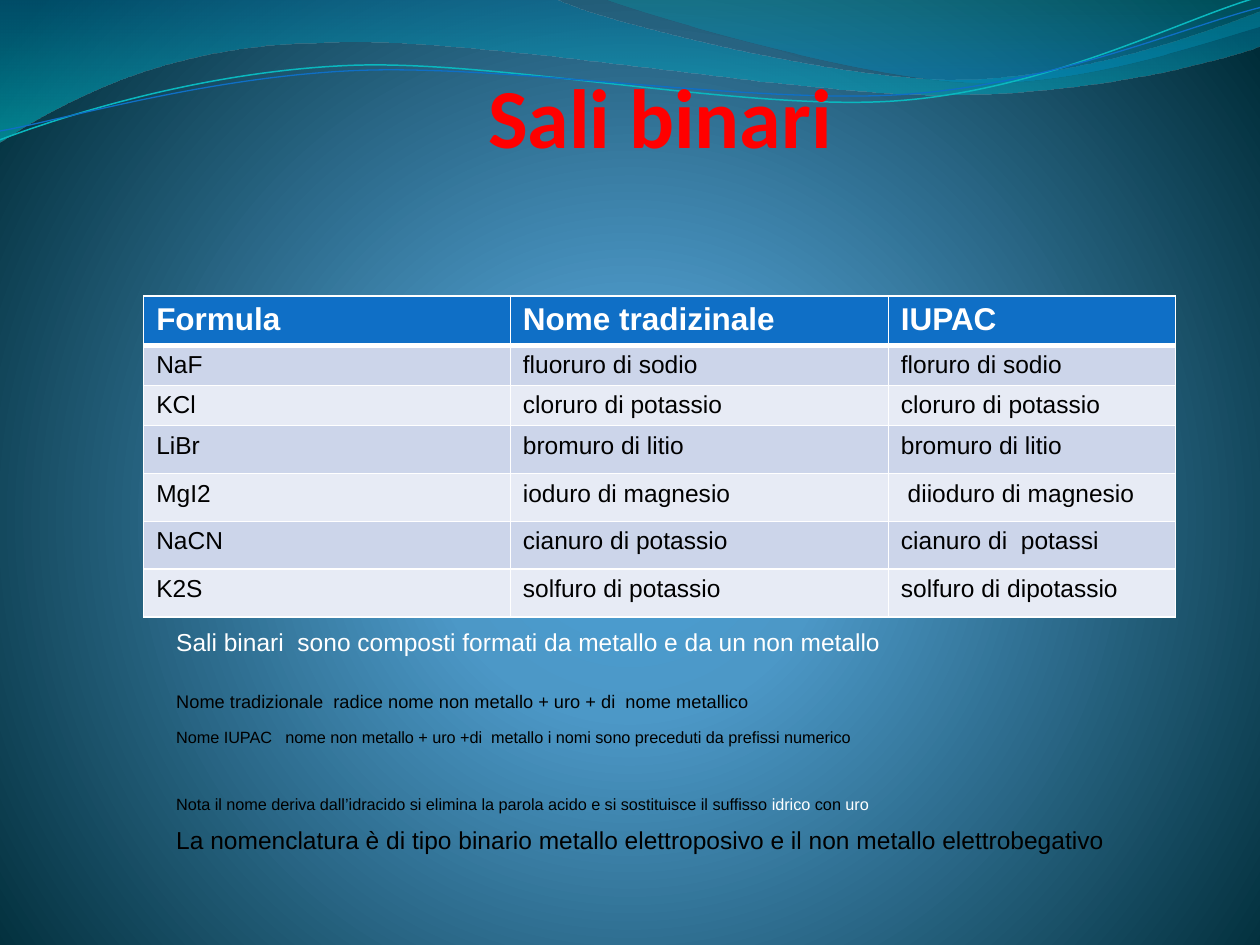
from lxml.etree import SubElement
from pptx import Presentation
from pptx.dml.color import RGBColor
from pptx.enum.text import MSO_ANCHOR, MSO_AUTO_SIZE, PP_ALIGN
from pptx.oxml.ns import qn
from pptx.util import Inches, Pt

WHITE, BLACK, RED, BLUE = "FFFFFF", "000000", "FF0000", "0F6FC6"
BANDS = ("CCD5EA", "E7EBF5")
SALTS = [
    ("Formula", "Nome tradizinale", "IUPAC"),
    ("NaF", "fluoruro di sodio", "floruro di sodio"),
    ("KCl", "cloruro di potassio", "cloruro di potassio"),
    ("LiBr", "bromuro di litio", "bromuro di litio"),
    ("MgI2", "ioduro di magnesio", " diioduro di magnesio"),
    ("NaCN", "cianuro di potassio", "cianuro di  potassi"),
    ("K2S", "solfuro di potassio", "solfuro di dipotassio"),
]
NOTES = [
    (14, False, 0, [("Sali binari  sono composti formati da metallo e da un non metallo ", WHITE)]),
    (18, True, 17, [("Nome tradizionale  radice nome non metallo + uro + di  nome metallico", BLACK)]),
    (16, True, 0, [("Nome IUPAC   nome non metallo + uro +di  metallo i nomi sono preceduti "
                    "da prefissi numerico", BLACK)]),
    (16, True, 19, [("Nota il nome deriva dall’idracido si elimina la parola acido e si "
                     "sostituisce il suffisso ", BLACK),
                    ("idrico ", WHITE), ("con ", BLACK), ("uro", WHITE)]),
    (14, False, 0, [("La nomenclatura è di tipo binario metallo elettroposivo e il non "
                     "metallo elettrobegativo", BLACK)]),
]
WIDE_WAVE = [
    (0, -0.01), (4.4, -0.01),
    (4.76, 0.17, 6.64, 0.63, 7.58, 0.63), (8.53, 0.63, 9.58, 0.26, 10, 0.09),
    (10.01, 0.36),
    (9.83, 0.44, 8.7, 0.76, 7.46, 0.75), (6.22, 0.75, 3.82, 0.28, 2.57, 0.34),
    (1.29, 0.35, 0.46, 0.83, -0.01, 1.13), (0, -0.01),
]
RIGHT_WAVE = [
    (4.79, -0.01),
    (5.09, 0.11, 6.82, 0.62, 7.69, 0.65), (8.56, 0.69, 9.61, 0.32, 10, 0.21),
    (10, 0), (4.79, -0.01),
]
TEAL_LINE = [
    (0, 1.11),
    (0.48, 0.93, 1.58, 0.57, 2.77, 0.52), (3.95, 0.47, 5.93, 0.89, 7.13, 0.8),
    (8.33, 0.71, 9.38, 0.15, 9.98, -0.02),
]
BLUE_LINE = [
    (0, 1.04),
    (0.47, 0.96, 1.64, 0.61, 2.83, 0.56), (4.03, 0.51, 5.97, 0.83, 7.17, 0.75),
    (8.36, 0.67, 9.41, 0.21, 10, 0.06),
]


def rgb(value):
    """Turn a hex string into a colour."""
    return RGBColor.from_string(value)


def add_run(paragraph, text, size, color, font="Arial", bold=False):
    """Add one formatted run to a paragraph."""
    run = paragraph.add_run()
    run.text = text
    run.font.name, run.font.size, run.font.bold = font, Pt(size), bold
    run.font.color.rgb = rgb(color)
    return run


def set_gradient(fill, holder, stops, center=None):
    """Give a fill gradient stops, running downwards or out from a center."""
    fill.gradient()
    gradient = holder.find(qn("a:gradFill"))
    for child in list(gradient):
        gradient.remove(child)
    stop_list = SubElement(gradient, qn("a:gsLst"))
    for position, color, alpha in stops:
        stop = SubElement(stop_list, qn("a:gs"), pos=str(position * 1000))
        tint = SubElement(stop, qn("a:srgbClr"), val=color)
        if alpha < 100:
            SubElement(tint, qn("a:alpha"), val=str(alpha * 1000))
    if center:
        circle = SubElement(gradient, qn("a:path"), path="circle")
        SubElement(circle, qn("a:fillToRect"),
                   {side: str(share * 1000) for side, share in zip("ltrb", center)})
    else:
        SubElement(gradient, qn("a:lin"), ang="5400000", scaled="0")


def add_curve(slide, outline, close):
    """Draw an outline whose six-number parts are cubic curves."""
    start, *rest = [(Inches(x), Inches(y)) for part in outline
                    for x, y in zip(part[::2], part[1::2])]
    builder = slide.shapes.build_freeform(*start)
    builder.add_line_segments(rest, close=close)
    curve = builder.convert_to_shape()
    curve.shadow.inherit = False
    segments = iter(list(curve.element.iter(qn("a:lnTo"))))
    for part in outline[1:]:
        first = next(segments)
        if len(part) == 6:
            first.tag = qn("a:cubicBezTo")
            for segment in (next(segments), next(segments)):
                first.append(segment[0])
                segment.getparent().remove(segment)
    return curve


def add_backdrop(slide):
    """Paint the background glow, the waves and their lines."""
    fill = slide.background.fill
    set_gradient(fill, slide.element.find(".//" + qn("p:bgPr")),
                 [(0, "4AA0D6", 100), (25, "4C98C7", 100), (100, "002C38", 100)],
                 center=(10, 110, 10, 100))
    for outline, stops in (
        (WIDE_WAVE, [(0, "0074A1", 45), (100, "00C6CF", 55)]),
        (RIGHT_WAVE, [(0, "00A1A9", 30), (80, "008BBF", 45)]),
    ):
        wave = add_curve(slide, outline, True)
        set_gradient(wave.fill, wave.element.spPr, stops)
        wave.line.fill.background()
    for outline, color, width in ((TEAL_LINE, "0AB8BF", 0.85), (BLUE_LINE, BLUE, 0.75)):
        ripple = add_curve(slide, outline, False)
        ripple.fill.background()
        ripple.line.color.rgb = rgb(color)
        ripple.line.width = Pt(width)


def place_title(slide, left, top, width, height):
    """Move the title placeholder into its box, in front of the waves."""
    title = slide.shapes.title
    slide.shapes.element.append(title.element)
    title.left, title.top, title.width, title.height = left, top, width, height
    frame = title.text_frame
    frame.auto_size = MSO_AUTO_SIZE.NONE
    frame.vertical_anchor = MSO_ANCHOR.BOTTOM
    frame.margin_left = frame.margin_top = frame.margin_bottom = 0
    frame.margin_right = Inches(0.02)
    heading = frame.paragraphs[0]
    heading.alignment = PP_ALIGN.CENTER
    add_run(heading, "Sali binari ", 48, RED, "Calibri", True)


def set_borders(cell, bottom_width, top_width):
    """Draw white borders around a cell."""
    properties = cell._tc.get_or_add_tcPr()
    widths = {"L": 1, "R": 1, "T": top_width, "B": bottom_width}
    for index, (side, width) in enumerate(widths.items()):
        border = SubElement(properties, qn(f"a:ln{side}"), w=str(Pt(width)))
        color = SubElement(border, qn("a:solidFill"))
        SubElement(color, qn("a:srgbClr"), val=WHITE)
        properties.insert(index, border)


def add_salts_table(slide, left, top, width, height):
    """Add the table of salts with a header and banded rows."""
    table = slide.shapes.add_table(len(SALTS), 3, left, top, width, height).table
    for column, size in zip(table.columns, (2.91, 3, 2.28)):
        column.width = Inches(size)
    for row, size in zip(table.rows, (0.39, 0.31, 0.31, 0.38, 0.38, 0.38, 0.38)):
        row.height = Inches(size)
    for row, names in enumerate(SALTS):
        header = row == 0
        for column, name in enumerate(names):
            cell = table.cell(row, column)
            cell.fill.solid()
            cell.fill.fore_color.rgb = rgb(BLUE if header else BANDS[(row - 1) % 2])
            set_borders(cell, 3 if header else 1, 3 if row == 1 else 1)
            add_run(cell.text_frame.paragraphs[0], name, 18 if header else 14,
                    WHITE if header else BLACK, bold=header)


def add_notes_text(slide, left, top, width, height):
    """Add the naming rules below the table."""
    frame = slide.shapes.add_textbox(left, top, width, height).text_frame
    frame.word_wrap = True
    for index, (size, raised, gap, parts) in enumerate(NOTES):
        rule = frame.add_paragraph() if index else frame.paragraphs[0]
        if gap:
            rule.space_before = Pt(gap)
        for text, color in parts:
            run = add_run(rule, text, size, color)
            if raised:
                run.font._element.set("baseline", "30000")


def main():
    """Build and save the slide."""
    deck = Presentation()
    deck.slide_width, deck.slide_height = Inches(10), Inches(7.5)
    slide = deck.slides.add_slide(deck.slide_layouts[0])
    subtitle = slide.placeholders[1].element
    subtitle.getparent().remove(subtitle)
    add_backdrop(slide)
    place_title(slide, Inches(1.03), Inches(0.29), Inches(8.59), Inches(1.02))
    add_salts_table(slide, Inches(1.14), Inches(2.35), Inches(8.19), Inches(2.54))
    add_notes_text(slide, Inches(1.3), Inches(4.93), Inches(7.72), Inches(1.47))
    deck.save("out.pptx")


if __name__ == "__main__":
    main()
